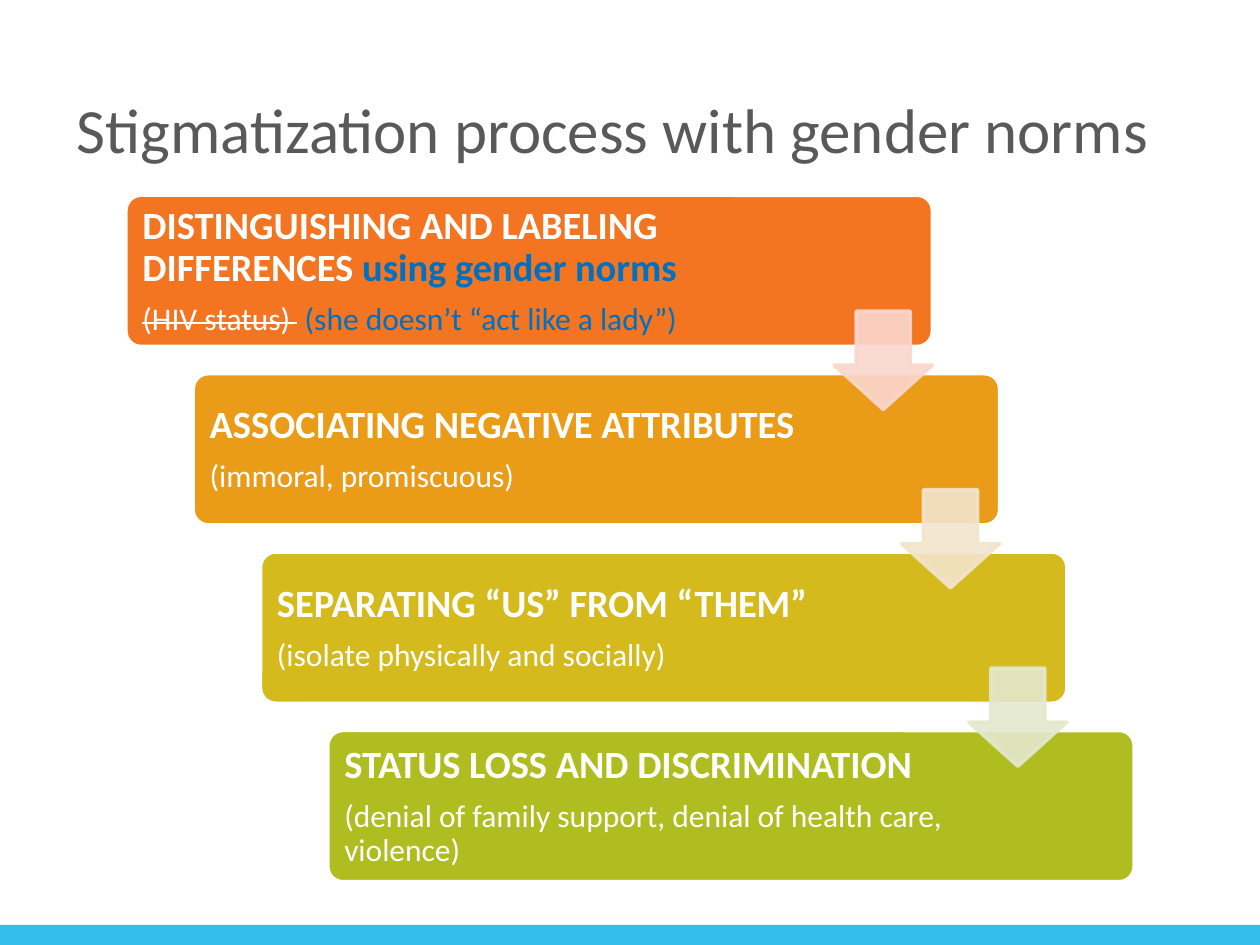
from dataclasses import dataclass
from typing import NamedTuple

from lxml.etree import SubElement
from pptx import Presentation
from pptx.dml.color import RGBColor
from pptx.enum.shapes import MSO_SHAPE
from pptx.enum.text import MSO_ANCHOR, PP_ALIGN
from pptx.oxml.ns import qn
from pptx.util import Inches, Pt

CELL = 0.1  # inches; the slide is a grid of 100 columns by 75 rows


@dataclass(frozen=True)
class Theme:
    font: str = "Calibri"
    title: str = "595959"
    light: str = "FFFFFF"
    accent: str = "0070C0"
    footer: str = "32BDEA"
    title_size: float = 36
    heading_size: float = 22
    detail_size: float = 18
    outline: float = 2
    arrow_opacity: int = 90


class Area(NamedTuple):
    """A rectangle in grid columns and rows."""
    column: float
    row: float
    columns: float
    rows: float

    def shifted(self, index: int) -> "Area":
        """The same rectangle moved down the staircase by index steps."""
        return self._replace(column=self.column + STEP_COLUMNS * index,
                             row=self.row + STEP_ROWS * index)

    def lengths(self) -> list:
        return [Inches(value * CELL) for value in self]


class Span(NamedTuple):
    text: str
    color: str
    strike: bool = False


class Stage(NamedTuple):
    fill: str
    heading: list[Span]
    detail: list[Span]
    arrow: str | None = None


THEME = Theme()
STEP_COLUMNS, STEP_ROWS = 5.34, 14.16
TITLE = Area(5.1, 4.9, 89.9, 10.6)
FOOTER = Area(0, 73.4, 100, 1.6)
BOX = Area(10, 15.5, 64, 12)
BOX_TEXT = Area(10.4, 15.9, 50.1, 11.3)
ARROW = Area(66.2, 24.7, 7.8, 7.8)


def plain(text: str) -> list[Span]:
    return [Span(text, THEME.light)]


STAGES = [
    Stage("F37421",
          [Span("DISTINGUISHING AND LABELING DIFFERENCES ", THEME.light),
           Span("using gender norms", THEME.accent)],
          [Span("(HIV status) ", THEME.light, strike=True),
           Span(" ", THEME.light),
           Span("(she doesn’t “act like a lady”)", THEME.accent)],
          "FAD6CD"),
    Stage("EA9C18", plain("ASSOCIATING NEGATIVE ATTRIBUTES"),
          plain("(immoral, promiscuous)"), "F2E5CC"),
    Stage("D4BA1C", plain("SEPARATING “US” FROM “THEM”"),
          plain("(isolate physically and socially)"), "E4E8CD"),
    Stage("AFBD21", plain("STATUS LOSS AND DISCRIMINATION"),
          plain("(denial of family support, denial of health care, violence)")),
]


def add_block(slide, kind: MSO_SHAPE, area: Area, fill: str,
              line: str | None = None, adjustments: tuple = ()):
    shape = slide.shapes.add_shape(kind, *area.lengths())
    shape.shadow.inherit = False
    shape.fill.solid()
    shape.fill.fore_color.rgb = RGBColor.from_string(fill)
    if line:
        shape.line.color.rgb = RGBColor.from_string(line)
        shape.line.width = Pt(THEME.outline)
    else:
        shape.line.fill.background()
    for index, value in enumerate(adjustments):
        shape.adjustments[index] = value
    return shape


def add_text_frame(slide, area: Area):
    frame = slide.shapes.add_textbox(*area.lengths()).text_frame
    frame.word_wrap = True
    frame.vertical_anchor = MSO_ANCHOR.MIDDLE
    return frame


def write_spans(paragraph, spans: list[Span], size: float, bold: bool = False) -> None:
    paragraph.alignment = PP_ALIGN.LEFT
    paragraph.font.name = THEME.font
    paragraph.font.size = Pt(size)
    paragraph.font.bold = bold
    for span in spans:
        run = paragraph.add_run()
        run.text = span.text
        run.font.color.rgb = RGBColor.from_string(span.color)
        if span.strike:
            run._r.get_or_add_rPr().set("strike", "sngStrike")


def add_stage(slide, stage: Stage, index: int) -> None:
    add_block(slide, MSO_SHAPE.ROUNDED_RECTANGLE, BOX.shifted(index),
              stage.fill, THEME.light, (0.1,))
    frame = add_text_frame(slide, BOX_TEXT.shifted(index))
    frame.margin_left = frame.margin_right = Inches(0.09)
    frame.margin_top = frame.margin_bottom = Inches(0.09)
    heading, detail = frame.paragraphs[0], frame.add_paragraph()
    write_spans(heading, stage.heading, THEME.heading_size, bold=True)
    write_spans(detail, stage.detail, THEME.detail_size)
    for paragraph in (heading, detail):
        paragraph.line_spacing = 0.9
        paragraph.space_after = Pt(0.35 * paragraph.font.size.pt)


def add_arrow(slide, color: str, index: int) -> None:
    arrow = add_block(slide, MSO_SHAPE.DOWN_ARROW, ARROW.shifted(index),
                      color, color, (0.55, 0.45))
    for color_element in arrow._element.spPr.iter(qn("a:srgbClr")):
        SubElement(color_element, qn("a:alpha"), val=str(THEME.arrow_opacity * 1000))


def main() -> None:
    presentation = Presentation()
    presentation.slide_width = Inches(100 * CELL)
    presentation.slide_height = Inches(75 * CELL)
    slide = presentation.slides.add_slide(presentation.slide_layouts[6])

    add_block(slide, MSO_SHAPE.RECTANGLE, FOOTER, THEME.footer)
    title = add_text_frame(slide, TITLE).paragraphs[0]
    write_spans(title, [Span("Stigmatization process with gender norms", THEME.title)],
                THEME.title_size)
    for index, stage in enumerate(STAGES):
        add_stage(slide, stage, index)
    for index, stage in enumerate(STAGES):
        if stage.arrow:
            add_arrow(slide, stage.arrow, index)
    presentation.save("out.pptx")


if __name__ == "__main__":
    main()
